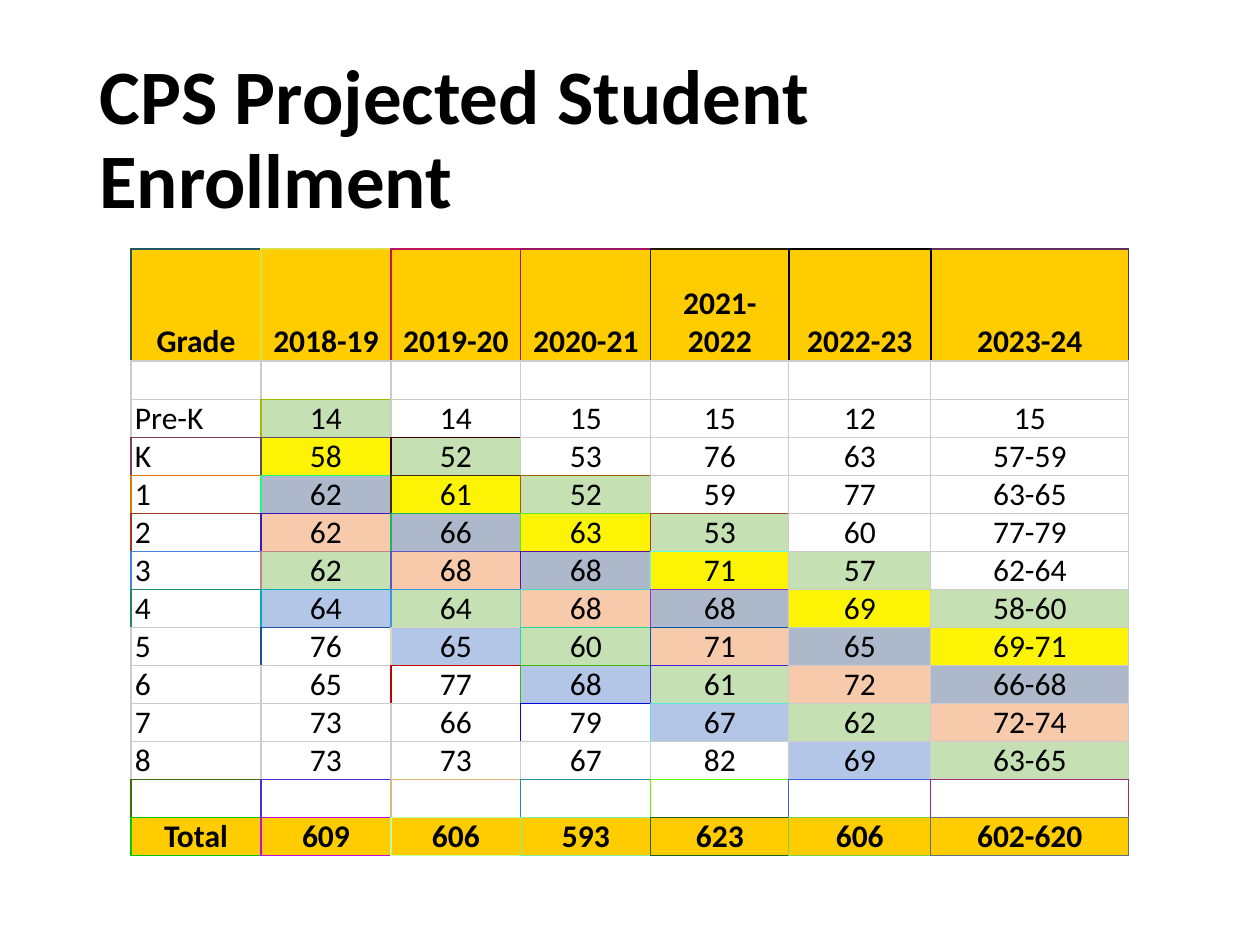
from lxml.etree import SubElement
from pptx import Presentation
from pptx.dml.color import RGBColor
from pptx.enum.text import MSO_ANCHOR, PP_ALIGN
from pptx.oxml.ns import qn
from pptx.util import Pt

PX = 914400 // 126
HUES = {
    "ink": "000000", "paper": "FFFFFF", "gold": "FFCC00", "grey": "CCCCCC",
    "green": "C5E0B3", "yellow": "FCF305", "slate": "ADB9CA",
    "peach": "F7CAAC", "blue": "B4C6E7",
}
BANDS = {-1: "green", 0: "yellow", 1: "slate", 2: "peach", 3: "green", 4: "blue"}
EDGES = {
    0: "205763 E0DF42 C01362 A01263 201803 000000 603162",
    2: "CCCCCC A0BD03",
    3: "804063 604B62 400002",
    4: "E07703 20FC82 402B02 A06102",
    5: "A03723 4016C2 20B362 60E622 A04022",
    6: "4089E3 C08583 6056C2 600FA3 60FCE3",
    7: "208A62 00AEC3 4093E3 40DBC2 A02CC3",
    8: "CCCCCC 204EA2 E0D3C2 20D9A2 005AA2",
    9: "CCCCCC CCCCCC C00202 40B603 4022E3",
    10: "CCCCCC CCCCCC CCCCCC 0008E2 60E3E3",
    12: "406A03 4033E3 E0B782 2093A2 60F802 405EE3 A02A83",
    13: "00C602 C00CE2 C0FDA2 80F0A3 205E23 80D142 607083",
}
ROWS = [
    "Grade 2018-19 2019-20 2020-21 2021-2022 2022-23 2023-24".split(),
    [""] * 7,
    "Pre-K 14 14 15 15 12 15".split(),
    "K 58 52 53 76 63 57-59".split(),
    "1 62 61 52 59 77 63-65".split(),
    "2 62 66 63 53 60 77-79".split(),
    "3 62 68 68 71 57 62-64".split(),
    "4 64 64 68 68 69 58-60".split(),
    "5 76 65 60 71 65 69-71".split(),
    "6 65 77 68 61 72 66-68".split(),
    "7 73 66 79 67 62 72-74".split(),
    "8 73 73 67 82 69 63-65".split(),
    [""] * 7,
    "Total 609 606 593 623 606 602-620".split(),
]
LAST = len(ROWS) - 1
WIDTHS = [130, 130, 130, 130, 138, 142, 198]
HEIGHTS = [112, 39] + [38] * 12


def style(para, size, bold):
    """Set the font of a whole paragraph."""
    font = para.font
    font.name, font.size, font.bold = "Calibri", Pt(size), bold
    font.color.rgb = RGBColor.from_string(HUES["ink"])


def edge(row, col):
    """Return the colour that a cell gives its left and top edges."""
    tints = EDGES.get(row, "").split()
    return tints[col] if col < len(tints) else HUES["grey"]


def border(cell, row, col):
    """Draw four edges, the right and bottom ones shared with the neighbours."""
    own = edge(row, col)
    heavy = row == 0 and col == 6
    sides = {
        "L": HUES["ink"] if heavy else own,
        "R": edge(row, min(col + 1, 6)) if (row, col) != (0, 5) else HUES["ink"],
        "T": own,
        "B": edge(min(row + 1, LAST), col),
    }
    props = cell._tc.get_or_add_tcPr()
    for side, tint in sides.items():
        width = 1 if tint == HUES["ink"] else 0.75
        line = SubElement(props, qn("a:ln" + side), w=str(Pt(width)))
        fill = SubElement(line, qn("a:solidFill"))
        SubElement(fill, qn("a:srgbClr"), val=tint)


def shade(cell, row, col):
    """Fill gold rows, and follow each class of pupils down its diagonal."""
    hue = BANDS.get(row - 2 - col) if col and cell.text else None
    if row in (0, LAST):
        hue = "gold"
    if hue:
        cell.fill.solid()
        cell.fill.fore_color.rgb = RGBColor.from_string(HUES[hue])
    else:
        cell.fill.background()


def title(slide, left, top, width, height):
    """Place the heading in its box."""
    box = slide.shapes.add_textbox(left * PX, top * PX, width * PX, height * PX)
    frame = box.text_frame
    frame.word_wrap = True
    frame.vertical_anchor = MSO_ANCHOR.MIDDLE
    para = frame.paragraphs[0]
    para.text = "CPS Projected Student Enrollment"
    para.line_spacing = 0.9
    style(para, 44, True)


def grid(slide, left, top):
    """Place the enrolment table with its corner at the given point."""
    table = slide.shapes.add_table(
        len(ROWS), len(WIDTHS), left * PX, top * PX,
        sum(WIDTHS) * PX, sum(HEIGHTS) * PX,
    ).table
    table.first_row = table.horz_banding = False
    for part, width in zip(table.columns, WIDTHS):
        part.width = width * PX
    for part, height in zip(table.rows, HEIGHTS):
        part.height = height * PX
    for row, texts in enumerate(ROWS):
        for col, text in enumerate(texts):
            cell = table.cell(row, col)
            cell.text = text
            cell.margin_left = cell.margin_right = 4 * PX
            cell.margin_top = cell.margin_bottom = 0
            cell.vertical_anchor = MSO_ANCHOR.BOTTOM
            para = cell.text_frame.paragraphs[0]
            strong = row in (0, LAST)
            para.alignment = PP_ALIGN.CENTER if col or strong else PP_ALIGN.LEFT
            style(para, 18, strong)
            border(cell, row, col)
            shade(cell, row, col)


def main():
    """Build the slide and save it."""
    deck = Presentation()
    deck.slide_width, deck.slide_height = 1260 * PX, 945 * PX
    slide = deck.slides.add_slide(deck.slide_layouts[6])
    back = slide.background.fill
    back.solid()
    back.fore_color.rgb = RGBColor.from_string(HUES["paper"])
    title(slide, 87, 50, 1086, 183)
    grid(slide, 131, 249)
    deck.save("out.pptx")


if __name__ == "__main__":
    main()
